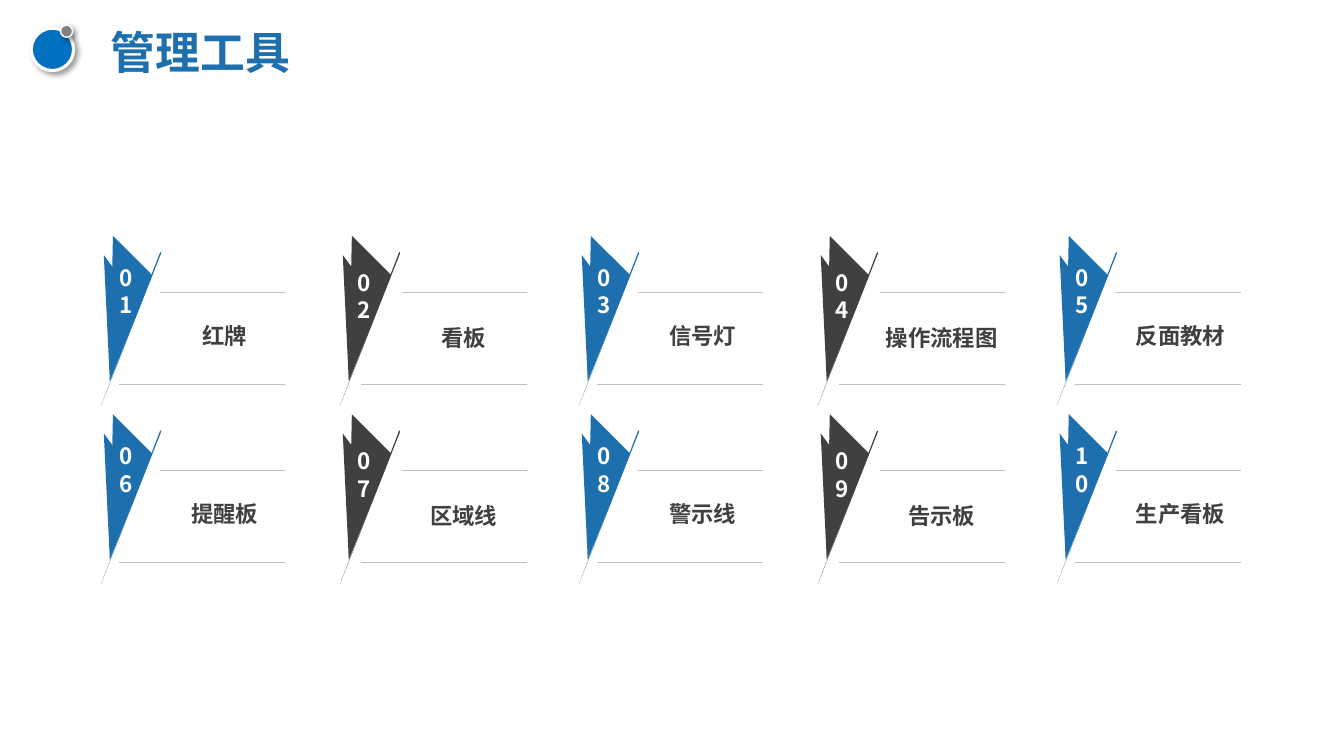
from dataclasses import dataclass

from lxml.etree import SubElement
from pptx import Presentation
from pptx.dml.color import RGBColor as Rgb
from pptx.enum.shapes import MSO_CONNECTOR as Connector
from pptx.enum.shapes import MSO_SHAPE as Preset
from pptx.enum.text import MSO_ANCHOR as Anchor
from pptx.enum.text import PP_ALIGN as Align
from pptx.oxml.ns import qn
from pptx.util import Emu, Pt

# Fine grid laid over the slide: 1333 columns by 750 rows
GRID_COLUMNS, GRID_ROWS = 1333, 750
UNIT = 9144
FONT = "Noto Sans CJK SC"
COLORS = {
    "blue": "1E6FAD",
    "dark": "404040",
    "disc": "0070C0",
    "dot": "808080",
    "rule": "BFBFBF",
    "white": "FFFFFF",
    "shadow": "000000",
}

# Tool cells: five across, two down
CELL_LEFT, CELL_TOP = 100, 234
CELL_WIDTH, CELL_HEIGHT = 237, 177
CELLS_ACROSS = 5
TOOLS = ["红牌", "看板", "信号灯", "操作流程图", "反面教材",
         "提醒板", "区域线", "警示线", "告示板", "生产看板"]

# Outlines measured from the corner of a cell
BLADES = [
    [(3, 19), (9, 144), (39, 68)],
    [(12, 0), (9, 144), (51, 39)],
    [(59, 16), (60, 17), (0, 169)],
]


@dataclass(frozen=True)
class Area:
    column: float
    row: float
    width: float
    height: float

    def moved(self, columns: float, rows: float) -> "Area":
        return Area(self.column + columns, self.row + rows, self.width, self.height)

    def lengths(self) -> list[Emu]:
        return [grid(n) for n in (self.column, self.row, self.width, self.height)]


@dataclass(frozen=True)
class CellStyle:
    color: str
    rule_shift: int
    number: Area
    label: Area


@dataclass(frozen=True)
class Bubble:
    area: Area
    color: str
    outline: float


STYLES = [
    CellStyle("blue", 0, Area(7, 14, 37, 81), Area(51, 52, 144, 86)),
    CellStyle("dark", 3, Area(6, 19, 37, 81), Area(51, 54, 144, 86)),
]
BUBBLES = [
    Bubble(Area(31, 28, 42, 42), "disc", 2.25),
    Bubble(Area(60, 25, 12, 12), "dot", 1),
]


def grid(count: float) -> Emu:
    return Emu(round(count * UNIT))


def color(name: str) -> Rgb:
    return Rgb.from_string(COLORS[name])


def write(box, text: str, size: float, ink: str, align, anchor, spacing) -> None:
    frame = box.text_frame
    frame.text = text
    frame.word_wrap = True
    frame.vertical_anchor = anchor
    para = frame.paragraphs[0]
    para.alignment = align
    para.line_spacing = spacing
    span = para.runs[0]
    span.font.size = Pt(size)
    span.font.bold = True
    span.font.name = FONT
    span.font.color.rgb = color(ink)
    SubElement(span.font._element, qn("a:ea"), typeface=FONT)


def add_shadow(shape) -> None:
    effects = SubElement(shape._element.spPr, qn("a:effectLst"))
    shadow = SubElement(effects, qn("a:outerShdw"), blurRad=str(Pt(4)),
                        dist=str(Pt(3)), dir="2700000", algn="tl", rotWithShape="0")
    tint = SubElement(shadow, qn("a:srgbClr"), val=COLORS["shadow"])
    SubElement(tint, qn("a:alpha"), val="40000")


def draw_bubble(page, bubble: Bubble) -> None:
    shape = page.shapes.add_shape(Preset.OVAL, *bubble.area.lengths())
    shape.fill.solid()
    shape.fill.fore_color.rgb = color(bubble.color)
    shape.line.color.rgb = color("white")
    shape.line.width = Pt(bubble.outline)
    add_shadow(shape)


def draw_blade(page, points: list[tuple[int, int]], left: int, top: int, ink: str) -> None:
    corners = [(left + x, top + y) for x, y in points]
    builder = page.shapes.build_freeform(*corners[0], scale=float(UNIT))
    builder.add_line_segments(corners[1:], close=True)
    blade = builder.convert_to_shape()
    blade.fill.solid()
    blade.fill.fore_color.rgb = color(ink)
    blade.line.fill.background()
    blade.shadow.inherit = False


def draw_rule(page, start: int, end: int, row: int) -> None:
    rule = page.shapes.add_connector(
        Connector.STRAIGHT, grid(start), grid(row), grid(end), grid(row))
    rule.line.color.rgb = color("rule")
    rule.line.width = Pt(0.5)
    SubElement(rule._element.spPr, qn("a:effectLst"))


def draw_tool(page, index: int, name: str) -> None:
    row, column = divmod(index, CELLS_ACROSS)
    left = CELL_LEFT + column * CELL_WIDTH
    top = CELL_TOP + row * CELL_HEIGHT
    style = STYLES[column % 2]

    for points in BLADES:
        draw_blade(page, points, left, top, style.color)

    rule_left = left + style.rule_shift
    for start, height in [(18, 147), (59, 56)]:
        draw_rule(page, rule_left + 183, rule_left + start, top + height)

    label = page.shapes.add_textbox(*style.label.moved(left, top).lengths())
    write(label, name, 16, "dark", Align.CENTER, Anchor.MIDDLE, 1.3)
    number = page.shapes.add_textbox(*style.number.moved(left, top).lengths())
    write(number, f"{index + 1:02}", 16, "white", Align.CENTER, Anchor.MIDDLE, Pt(19.5))


def main() -> None:
    deck = Presentation()
    deck.slide_width, deck.slide_height = grid(GRID_COLUMNS), grid(GRID_ROWS)
    page = deck.slides.add_slide(deck.slide_layouts[5])

    # Heading
    for bubble in BUBBLES:
        draw_bubble(page, bubble)
    title = page.shapes.title
    title.left, title.top, title.width, title.height = Area(100, 19, 370, 64).lengths()
    write(title, "管理工具", 32, "blue", Align.LEFT, Anchor.TOP, Pt(39))

    # Tools
    for index, name in enumerate(TOOLS):
        draw_tool(page, index, name)

    deck.save("out.pptx")


if __name__ == "__main__":
    main()
